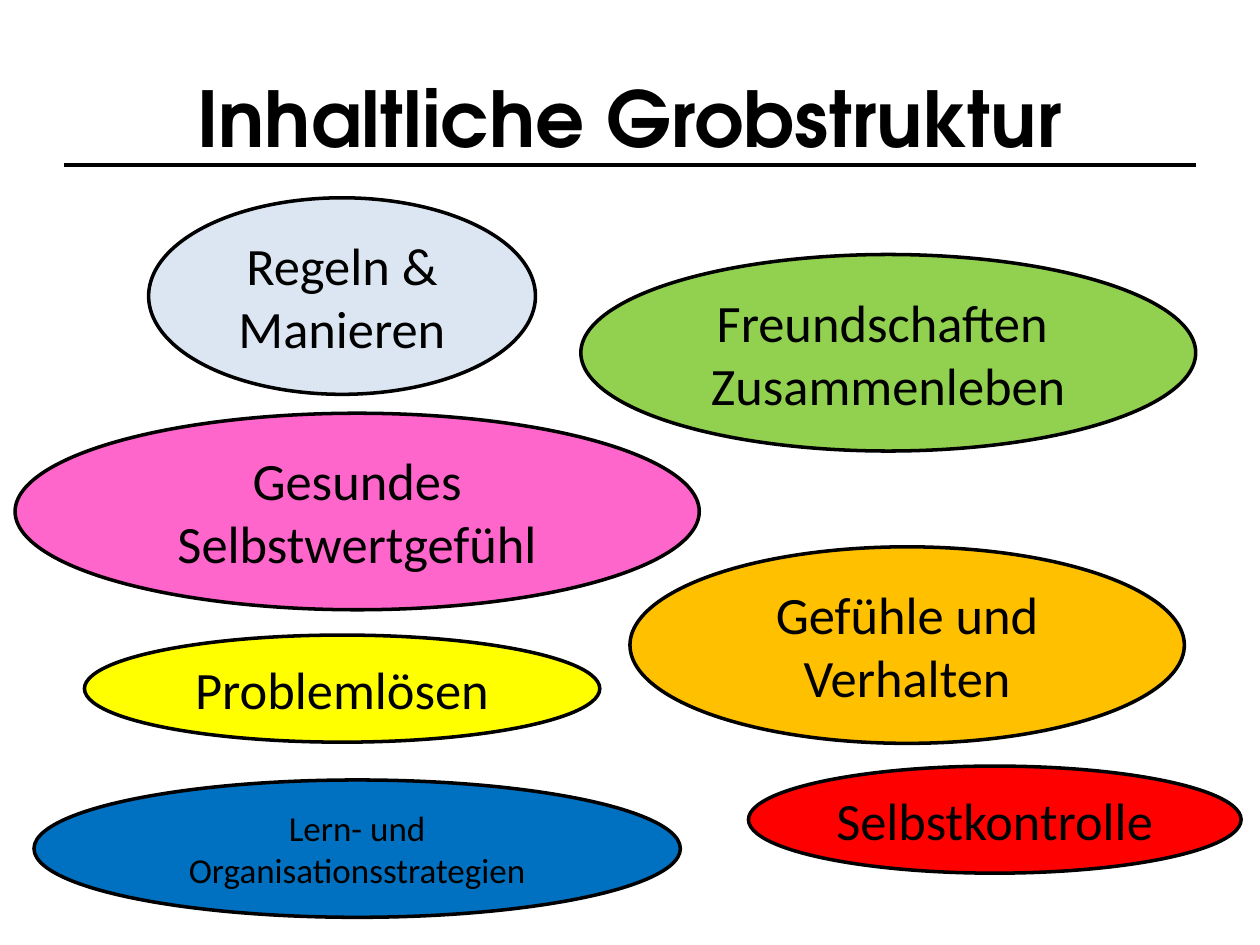
import pptx
import pptx.util
import pptx.dml.color
import pptx.enum.shapes
import pptx.enum.text
import pptx.oxml.ns
import lxml.etree

Inches = pptx.util.Inches
Pt = pptx.util.Pt

COLOURS = {
    "black": "000000",
    "pale blue": "DCE6F2",
    "green": "92D050",
    "pink": "FF66CC",
    "red": "FF0000",
    "yellow": "FFFF00",
    "orange": "FFC000",
    "blue": "0070C0",
}


def colour(name):
    return pptx.dml.color.RGBColor.from_string(COLOURS[name])


def write_text(shape, text, font_name, size, bold=False):
    text_frame = shape.text_frame
    text_frame.text = text
    text_frame.word_wrap = True
    text_frame.vertical_anchor = pptx.enum.text.MSO_ANCHOR.MIDDLE
    for paragraph in text_frame.paragraphs:
        paragraph.alignment = pptx.enum.text.PP_ALIGN.CENTER
        for run in paragraph.runs:
            run.font.name = font_name
            run.font.size = Pt(size)
            run.font.bold = bold
            run.font.color.rgb = colour("black")


presentation = pptx.Presentation()
presentation.slide_width = Inches(10)
presentation.slide_height = Inches(7.5)
slide = presentation.slides.add_slide(presentation.slide_layouts[6])

# Title
title = slide.shapes.add_textbox(Inches(0.5), Inches(0.3), Inches(9), Inches(1.25))
write_text(title, "Inhaltliche Grobstruktur", "TeX Gyre Adventor", 44, bold=True)

# Rule under the title
rule = slide.shapes.add_connector(
    pptx.enum.shapes.MSO_CONNECTOR.STRAIGHT,
    Inches(0.51), Inches(1.31), Inches(9.49), Inches(1.31))
rule.line.color.rgb = colour("black")
rule.line.width = Pt(2.25)
lxml.etree.SubElement(rule.element.spPr, pptx.oxml.ns.qn("a:effectLst"))

# Topics: text, fill, left, top, width, height, text size
topics = [
    ("Regeln & Manieren", "pale blue", 1.18, 1.57, 3.07, 1.56, 30),
    ("Freundschaften \nZusammenleben", "green", 4.61, 2.02, 4.88, 1.56, 30),
    ("Gesundes Selbstwertgefühl", "pink", 0.12, 3.28, 5.43, 1.56, 30),
    ("Selbstkontrolle", "red", 5.94, 6.08, 3.91, 0.85, 30),
    ("Problemlösen", "yellow", 0.67, 5.04, 4.09, 0.85, 30),
    ("Gefühle und Verhalten", "orange", 5, 4.34, 4.4, 1.56, 30),
    ("Lern- und Organisationsstrategien", "blue", 0.27, 6.19, 5.13, 1.09, 20),
]
for text, fill, left, top, width, height, size in topics:
    ellipse = slide.shapes.add_shape(
        pptx.enum.shapes.MSO_SHAPE.OVAL,
        Inches(left), Inches(top), Inches(width), Inches(height))
    ellipse.shadow.inherit = False
    ellipse.fill.solid()
    ellipse.fill.fore_color.rgb = colour(fill)
    ellipse.line.color.rgb = colour("black")
    ellipse.line.width = Pt(2)
    write_text(ellipse, text, "Calibri", size)

presentation.save("out.pptx")
